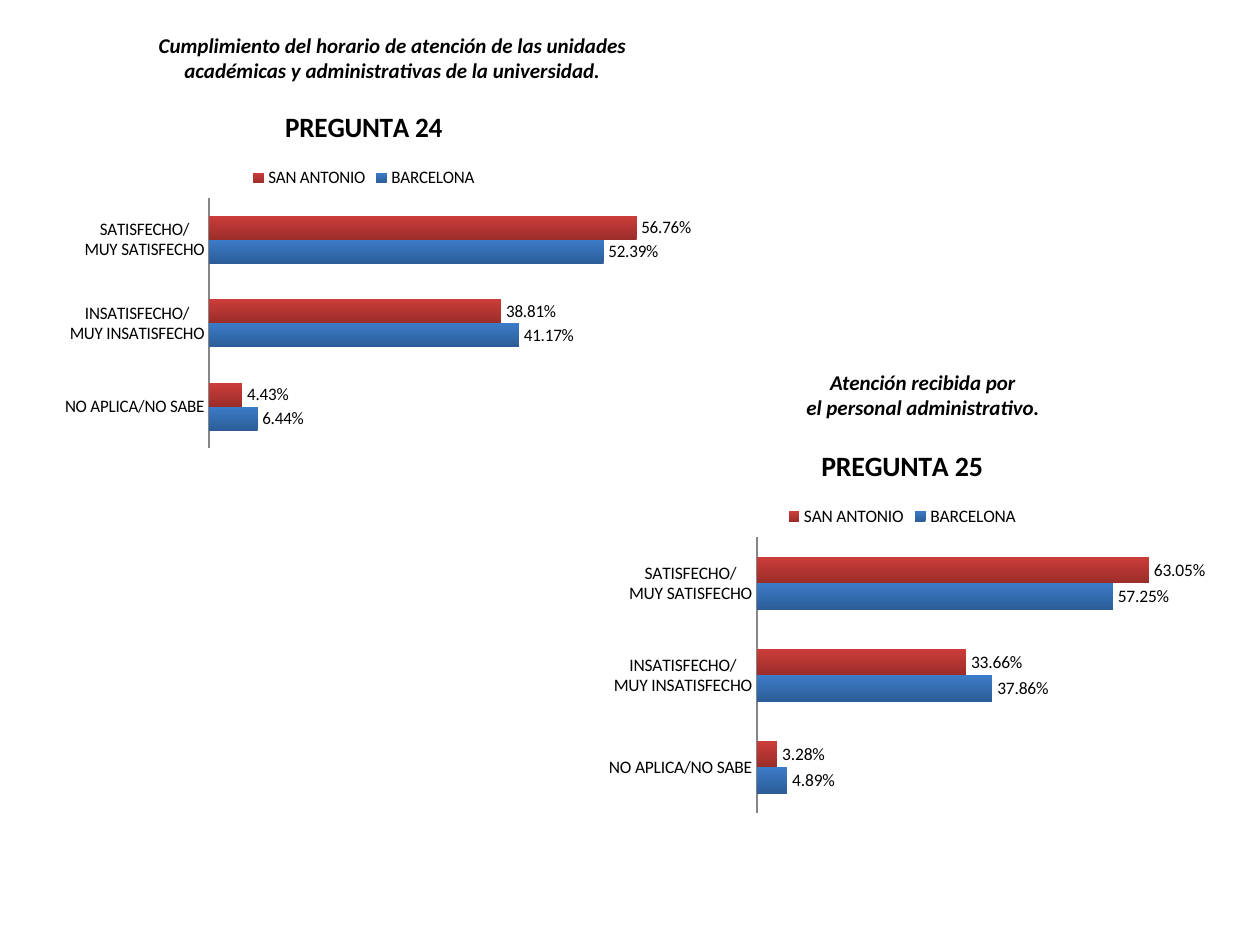
from lxml import etree
from pptx import Presentation
from pptx.chart.data import CategoryChartData
from pptx.dml.color import RGBColor
from pptx.enum.chart import XL_CHART_TYPE, XL_LABEL_POSITION, XL_LEGEND_POSITION, XL_TICK_MARK
from pptx.enum.text import MSO_AUTO_SIZE, PP_ALIGN
from pptx.oxml.ns import qn
from pptx.util import Pt

BAR = XL_CHART_TYPE.BAR_CLUSTERED
TOP = XL_LEGEND_POSITION.TOP
OUTSIDE = XL_LABEL_POSITION.OUTSIDE_END
NO_TICK = XL_TICK_MARK.NONE
CENTER = PP_ALIGN.CENTER
GROW = MSO_AUTO_SIZE.SHAPE_TO_FIT_TEXT

FONT = "Calibri"
PERCENT = "0.00%"
COLORS = {"text": "000000", "axis": "868686"}
# Bottom and top colour of each campus's bars
GRADIENTS = {
    "BARCELONA": ("2C5D98", "3C7BC7"),
    "SAN ANTONIO": ("9B2D2A", "CB3D3A"),
}
ANSWERS = ["NO APLICA/NO SABE", "INSATISFECHO/\nMUY INSATISFECHO",
           "SATISFECHO/\nMUY SATISFECHO"]


def rgb(name):
    return RGBColor.from_string(COLORS.get(name, name))


def format_font(font, size=10, bold=False, italic=False, color="text"):
    font.name = FONT
    font.size = Pt(size)
    font.bold = bold
    font.italic = italic
    font.color.rgb = rgb(color)


def add_text(p, text, **fmt):
    r = p.add_run()
    r.text = text
    format_font(r.font, **fmt)


def set_plot_layout(chart, x, y, w, h):
    """Fix the inner plot area, in fractions of the chart."""
    area = chart._chartSpace.chart.plotArea
    for old in area.findall(qn("c:layout")):
        area.remove(old)
    layout = etree.Element(qn("c:layout"))
    manual = etree.SubElement(layout, qn("c:manualLayout"))
    values = {"layoutTarget": "inner", "xMode": "edge", "yMode": "edge",
              "x": x, "y": y, "w": w, "h": h}
    for tag, value in values.items():
        etree.SubElement(manual, qn(f"c:{tag}")).set("val", str(value))
    area.insert(0, layout)


class SurveySlide:
    def __init__(self, prs):
        self.s = prs.slides.add_slide(prs.slide_layouts[6])

    def heading(self, lines, left, top, width, height):
        box = self.s.shapes.add_textbox(Pt(left), Pt(top), Pt(width), Pt(height))
        tf = box.text_frame
        tf.word_wrap = True
        tf.auto_size = GROW
        for i, line in enumerate(lines):
            p = tf.add_paragraph() if i else tf.paragraphs[0]
            p.alignment = CENTER
            add_text(p, line, size=12, bold=True, italic=True)

    def bar_chart(self, title, results, box, layout, maximum):
        data = CategoryChartData(number_format=PERCENT)
        data.categories = ANSWERS
        for campus, values in results.items():
            data.add_series(campus, values)
        frame = self.s.shapes.add_chart(BAR, *[Pt(v) for v in box], data)
        chart = frame.chart
        format_font(chart.font)

        # Title and legend
        chart.has_title = True
        add_text(chart.chart_title.text_frame.paragraphs[0], title, size=16, bold=True)
        chart.chart_title.include_in_layout = False
        chart.has_legend = True
        chart.legend.position = TOP
        chart.legend.include_in_layout = False

        # Axes
        axis = chart.category_axis
        axis.major_tick_mark = axis.minor_tick_mark = NO_TICK
        axis.format.line.color.rgb = rgb("axis")
        axis.format.line.width = Pt(0.75)
        scale = chart.value_axis
        scale.visible = False
        scale.has_major_gridlines = False
        scale.minimum_scale = 0
        scale.maximum_scale = maximum
        scale.tick_labels.number_format = PERCENT
        scale.tick_labels.number_format_is_linked = False

        # Bars and their labels
        plot = chart.plots[0]
        plot.gap_width = 150
        plot.vary_by_categories = False
        for series in plot.series:
            fill = series.format.fill
            fill.gradient()
            fill.gradient_angle = 90
            for stop, color in zip(fill.gradient_stops, GRADIENTS[series.name]):
                stop.color.rgb = rgb(color)
            labels = series.data_labels
            labels.show_value = True
            labels.number_format = PERCENT
            labels.number_format_is_linked = False
            labels.position = OUTSIDE
            format_font(labels.font)
        set_plot_layout(chart, *layout)


def main():
    prs = Presentation()
    prs.slide_width, prs.slide_height = Pt(720), Pt(540)
    slide = SurveySlide(prs)

    # Question 24
    slide.heading(["Cumplimiento del horario de atención de las unidades "
                   "académicas y administrativas de la universidad."],
                  65.5, 15, 317.5, 36)
    slide.bar_chart("PREGUNTA 24",
                    {"BARCELONA": (0.0644, 0.4117, 0.5239),
                     "SAN ANTONIO": (0.0443, 0.3881, 0.5676)},
                    box=(31, 51, 364.3, 207.4),
                    layout=(0.25, 0.3, 0.73, 0.69), maximum=0.6)

    # Question 25
    slide.heading(["Atención recibida por", "el personal administrativo."],
                  450.7, 207.4, 153.4, 36)
    slide.bar_chart("PREGUNTA 25",
                    {"BARCELONA": (0.0489, 0.3786, 0.5725),
                     "SAN ANTONIO": (0.0328, 0.3366, 0.6305)},
                    box=(342.7, 244, 346.3, 225.4),
                    layout=(0.26, 0.28, 0.72, 0.7), maximum=0.7)

    prs.save("out.pptx")


if __name__ == "__main__":
    main()
